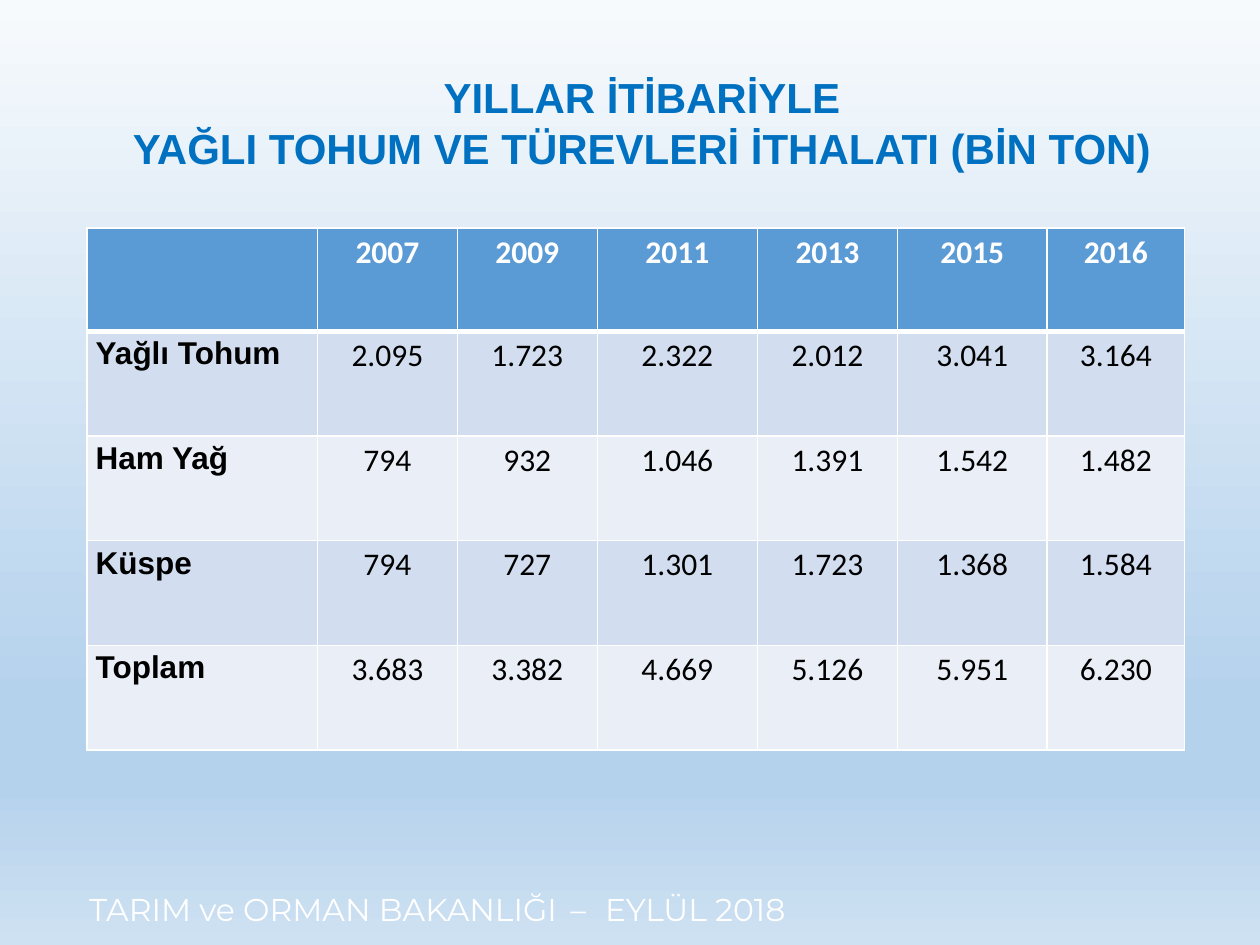
"""Build a slide with a table of oilseed imports by year."""
import typing

import lxml.etree
import pptx
import pptx.dml.color
import pptx.enum.text
import pptx.oxml.ns
import pptx.util

Cm = pptx.util.Cm
Pt = pptx.util.Pt
Align = pptx.enum.text.PP_ALIGN
qn = pptx.oxml.ns.qn


class Style(typing.NamedTuple):
    font: str
    size: int
    ink: str
    bold: bool = False


class Row(typing.NamedTuple):
    label: str
    items: list[str]
    fill: str
    head: bool = False


TITLE = Style("Arial", 24, "0070C0", True)
HEAD = Style("Calibri", 18, "FFFFFF", True)
LABEL = Style("Arial", 18, "000000", True)
VALUE = Style("Calibri", 18, "000000")
FOOT = Style("Montserrat", 18, "FFFFFF")

BANDS = ["D2DEEF", "EAEFF7"]
STOPS = [(0, "F7FAFD"), (74, "B5D2EC"), (83, "B5D2EC"), (100, "CEE1F2")]
WIDTHS = [4.65, 2.82, 2.82, 3.23, 2.82, 3.02, 2.77]
YEARS = ["2007", "2009", "2011", "2013", "2015", "2016"]
DATA = {
    "Yağlı Tohum": ["2.095", "1.723", "2.322", "2.012", "3.041", "3.164"],
    "Ham Yağ": ["794", "932", "1.046", "1.391", "1.542", "1.482"],
    "Küspe": ["794", "727", "1.301", "1.723", "1.368", "1.584"],
    "Toplam": ["3.683", "3.382", "4.669", "5.126", "5.951", "6.230"],
}


def color(code: str) -> pptx.dml.color.RGBColor:
    return pptx.dml.color.RGBColor.from_string(code)


def write(para, text: str, style: Style):
    run = para.add_run()
    run.text = text
    run.font.name = style.font
    run.font.size = Pt(style.size)
    run.font.bold = style.bold
    run.font.color.rgb = color(style.ink)
    return run


def place(shape, left: float, top: float, width: float, height: float) -> None:
    shape.left, shape.top = Cm(left), Cm(top)
    shape.width, shape.height = Cm(width), Cm(height)


def paint_back(slide) -> None:
    fill = slide.background.fill
    fill.gradient()
    fill.gradient_angle = 270
    stops = slide.element.find(".//" + qn("a:gsLst"))
    for old in list(stops):
        stops.remove(old)
    for spot, code in STOPS:
        stop = lxml.etree.SubElement(stops, qn("a:gs"), pos=str(spot * 1000))
        lxml.etree.SubElement(stop, qn("a:srgbClr"), val=code)


def edge(cell, top: int, base: int) -> None:
    props = cell._tc.get_or_add_tcPr()
    for side, width in {"L": 1, "R": 1, "T": top, "B": base}.items():
        line = lxml.etree.SubElement(props, qn("a:ln" + side), w=str(Pt(width)))
        fill = lxml.etree.SubElement(line, qn("a:solidFill"))
        lxml.etree.SubElement(fill, qn("a:srgbClr"), val="FFFFFF")


def fill_cell(cell, text: str, style: Style, fill: str, align) -> None:
    cell.fill.solid()
    cell.fill.fore_color.rgb = color(fill)
    cell.margin_left = cell.margin_right = Cm(0.18)
    cell.margin_top = cell.margin_bottom = Cm(0.1)
    if text:
        para = cell.text_frame.paragraphs[0]
        para.alignment = align
        write(para, text, style)


def draw_table(slide, rows: list[Row]) -> None:
    frame = slide.shapes.add_table(
        len(rows), len(WIDTHS), Cm(1.75), Cm(4.6), Cm(sum(WIDTHS)), Cm(10.52))
    table = frame.table
    for col, width in zip(table.columns, WIDTHS):
        col.width = Cm(width)
    for i, row in enumerate(rows):
        table.rows[i].height = Cm(2.08 if row.head else 2.11)
        for j, text in enumerate([row.label, *row.items]):
            cell = table.cell(i, j)
            edge(cell, 3 if i == 1 else 1, 3 if row.head else 1)
            style = HEAD if row.head else VALUE if j else LABEL
            fill_cell(cell, text, style, row.fill, Align.CENTER if j else Align.LEFT)


def draw_title(slide, lines: list[str]) -> None:
    title = slide.shapes.title
    place(title, 1.98, 1.32, 21.92, 2.31)
    frame = title.text_frame
    frame.auto_size = pptx.enum.text.MSO_AUTO_SIZE.NONE
    frame.vertical_anchor = pptx.enum.text.MSO_ANCHOR.TOP
    for i, line in enumerate(lines):
        para = frame.add_paragraph() if i else frame.paragraphs[0]
        para.alignment = Align.CENTER
        write(para, line, TITLE)


def draw_foot(slide) -> None:
    box = slide.shapes.add_textbox(Cm(1.55), Cm(17.81), Cm(23.85), Cm(1.02))
    box.text_frame.word_wrap = True
    para = box.text_frame.paragraphs[0]
    write(para, "TARIM ve ORMAN BAKANLIĞI", FOOT)
    dash = write(para, " – ", FOOT)
    dash._r.get_or_add_rPr().set("spc", "300")
    write(para, "EYLÜL 2018", FOOT)


def main() -> None:
    deck = pptx.Presentation()
    deck.slide_width, deck.slide_height = Cm(25.4), Cm(19.05)
    slide = deck.slides.add_slide(deck.slide_layouts[5])
    paint_back(slide)
    draw_foot(slide)
    rows = [Row("", YEARS, "5B9BD5", True)]
    for i, (label, items) in enumerate(DATA.items()):
        rows.append(Row(label, items, BANDS[i % 2]))
    draw_table(slide, rows)
    draw_title(slide, ["YILLAR İTİBARİYLE",
                       "YAĞLI TOHUM VE TÜREVLERİ İTHALATI (BİN TON)"])
    deck.save("out.pptx")


if __name__ == "__main__":
    main()
